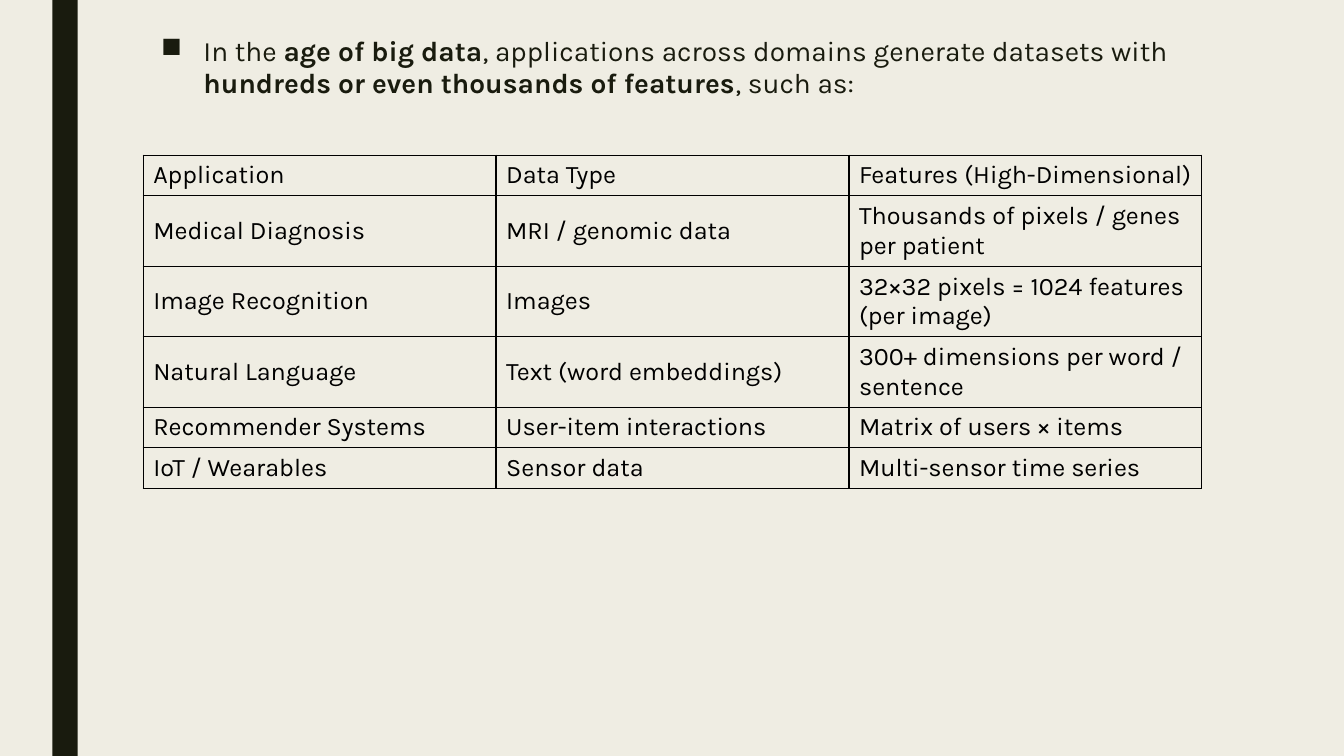
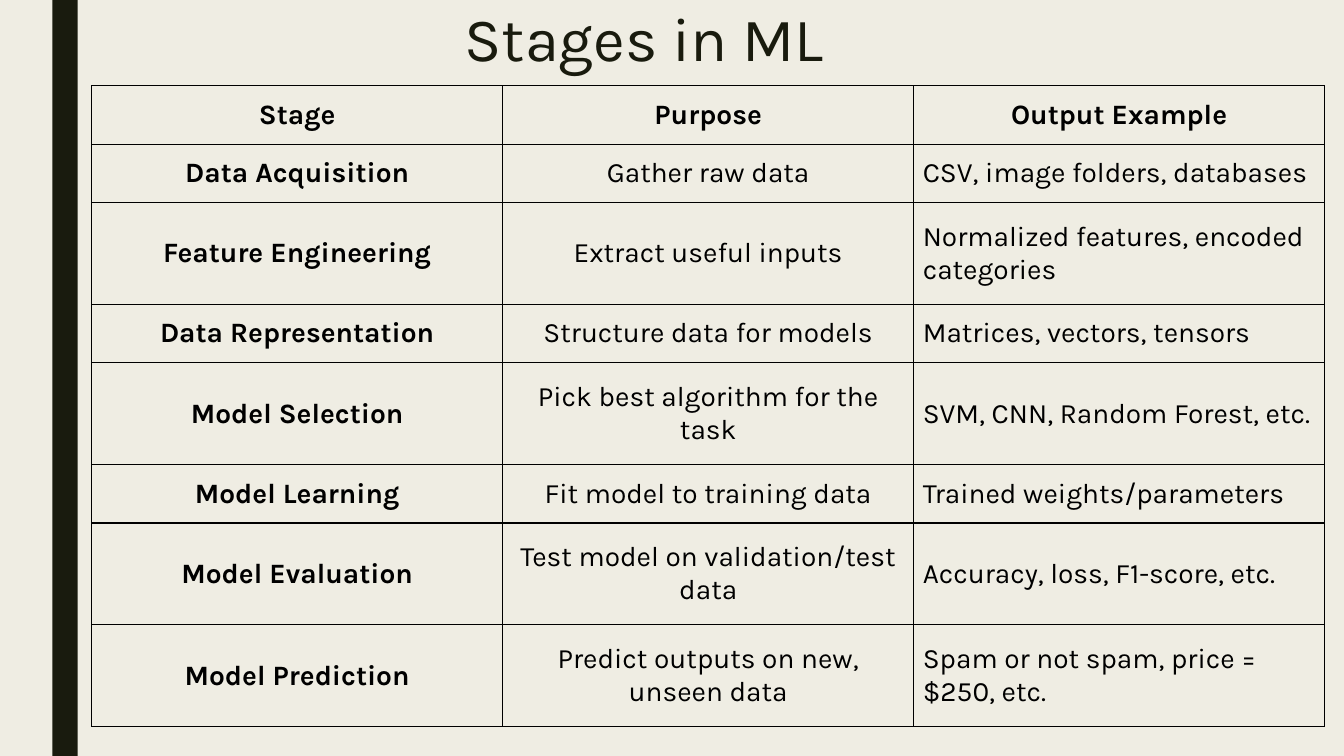
import pptx
import pptx.util
import pptx.dml.color
import pptx.enum.shapes
import pptx.enum.text
import pptx.oxml
import pptx.oxml.ns

Inches = pptx.util.Inches
Pt = pptx.util.Pt
ALIGN = pptx.enum.text.PP_ALIGN
ANCHOR = pptx.enum.text.MSO_ANCHOR

FONT = "Karla"
COLORS = {"background": "EFEDE3", "dark": "191B0E", "black": "000000"}

APPLICATIONS = [
    ("Application", "Data Type", "Features (High-Dimensional)"),
    ("Medical Diagnosis", "MRI / genomic data", "Thousands of pixels / genes per patient"),
    ("Image Recognition", "Images", "32×32 pixels = 1024 features (per image)"),
    ("Natural Language", "Text (word embeddings)", "300+ dimensions per word / sentence"),
    ("Recommender Systems", "User-item interactions", "Matrix of users × items"),
    ("IoT / Wearables", "Sensor data", "Multi-sensor time series"),
]

STAGES = [
    ("Stage", "Purpose", "Output Example"),
    ("Data Acquisition", "Gather raw data", "CSV, image folders, databases"),
    ("Feature Engineering", "Extract useful inputs", "Normalized features, encoded categories"),
    ("Data Representation", "Structure data for models", "Matrices, vectors, tensors"),
    ("Model Selection", "Pick best algorithm for the task", "SVM, CNN, Random Forest, etc."),
    ("Model Learning", "Fit model to training data", "Trained weights/parameters"),
    ("Model Evaluation", "Test model on validation/test data", "Accuracy, loss, F1-score, etc."),
    ("Model Prediction", "Predict outputs on new, unseen data", "Spam or not spam, price = $250, etc."),
]


def rgb(name):
    return pptx.dml.color.RGBColor.from_string(COLORS[name])


def drawing_xml(tag, attributes, content=""):
    namespace = pptx.oxml.ns.nsdecls("a")
    return pptx.oxml.parse_xml(f"<a:{tag} {namespace} {attributes}>{content}</a:{tag}>")


def write_text(tf, runs, size=18, color="black", align=ALIGN.LEFT, bold=False,
               line_spacing=None, before=None, after=None):
    if isinstance(runs, str):
        runs = [(runs, bold)]
    p = tf.paragraphs[0]
    p.alignment = align
    p.line_spacing = line_spacing
    p.space_before = before
    p.space_after = after
    for words, is_bold in runs:
        r = p.add_run()
        r.text = words
        r.font.name = FONT
        r.font.size = Pt(size)
        r.font.bold = is_bold
        r.font.color.rgb = rgb(color)
    return p


def add_text_box(s, left, top, width, height, runs, **style):
    tf = s.shapes.add_textbox(Inches(left), Inches(top), Inches(width), Inches(height)).text_frame
    tf.word_wrap = True
    return write_text(tf, runs, **style)


def set_bullet(p, indent):
    ppr = p._p.get_or_add_pPr()
    ppr.set("marL", str(Inches(indent)))
    ppr.set("indent", str(-Inches(indent)))
    ppr.append(drawing_xml("buChar", 'char="■"'))


def add_slide(prs):
    s = prs.slides.add_slide(prs.slide_layouts[6])
    band = s.shapes.add_shape(pptx.enum.shapes.MSO_SHAPE.RECTANGLE,
                              Inches(0.52), 0, Inches(0.25), prs.slide_height)
    band.shadow.inherit = False
    band.fill.solid()
    band.fill.fore_color.rgb = rgb("dark")
    band.line.fill.background()
    return s


def set_borders(cell):
    tcpr = cell._tc.get_or_add_tcPr()
    line = f'<a:solidFill><a:srgbClr val="{COLORS["black"]}"/></a:solidFill>'
    for i, side in enumerate("LRTB"):
        tcpr.insert(i, drawing_xml(f"ln{side}", f'w="{Pt(1)}"', line))


def add_grid(s, left, top, width, rows, heights, margins, style):
    columns = len(rows[0])
    table = s.shapes.add_table(len(rows), columns, Inches(left), Inches(top),
                               Inches(width), Inches(sum(heights))).table
    table.first_row = False
    table.horz_banding = False
    for column in table.columns:
        column.width = Inches(width / columns)
    for i, row in enumerate(rows):
        table.rows[i].height = Inches(heights[i])
        for j, words in enumerate(row):
            cell = table.cell(i, j)
            cell.fill.background()
            set_borders(cell)
            cell.vertical_anchor = ANCHOR.MIDDLE
            cell.margin_left = cell.margin_right = Inches(margins[0])
            cell.margin_top = cell.margin_bottom = Inches(margins[1])
            write_text(cell.text_frame, words, **style(i, j))


def plain_style(i, j):
    return {"size": 18}


def stage_style(i, j):
    return {"size": 20, "bold": i == 0 or j == 0,
            "align": ALIGN.CENTER if i == 0 or j < 2 else ALIGN.LEFT}


def build_applications(prs):
    s = add_slide(prs)
    p = add_text_box(s, 1.5, 0.31, 10.5, 1.0, [
        ("In the ", False),
        ("age of big data", True),
        (", applications across domains generate datasets with ", False),
        ("hundreds or even thousands of features", True),
        (", such as:", False),
    ], size=20, color="dark", line_spacing=0.94, before=Pt(10), after=Pt(2))
    set_bullet(p, 0.42)
    one, two = 0.39, 0.69
    add_grid(s, 1.42, 1.54, 10.5, APPLICATIONS, [one, two, two, two, one, one],
             (0.1, 0.05), plain_style)


def build_stages(prs):
    s = add_slide(prs)
    add_text_box(s, 1.14, 0.04, 10.5, 0.8, "Stages in ML", size=44, color="dark",
                 align=ALIGN.CENTER, line_spacing=0.89)
    one, two = 0.58, 1.01
    add_grid(s, 0.91, 0.85, 12.23, STAGES, [one, one, two, one, two, one, two, two],
             (0.09, 0.04), stage_style)


def main():
    prs = pptx.Presentation()
    prs.slide_width = Inches(13.33)
    prs.slide_height = Inches(7.5)
    fill = prs.slide_master.background.fill
    fill.solid()
    fill.fore_color.rgb = rgb("background")
    build_applications(prs)
    build_stages(prs)
    prs.save("out.pptx")


if __name__ == "__main__":
    main()
